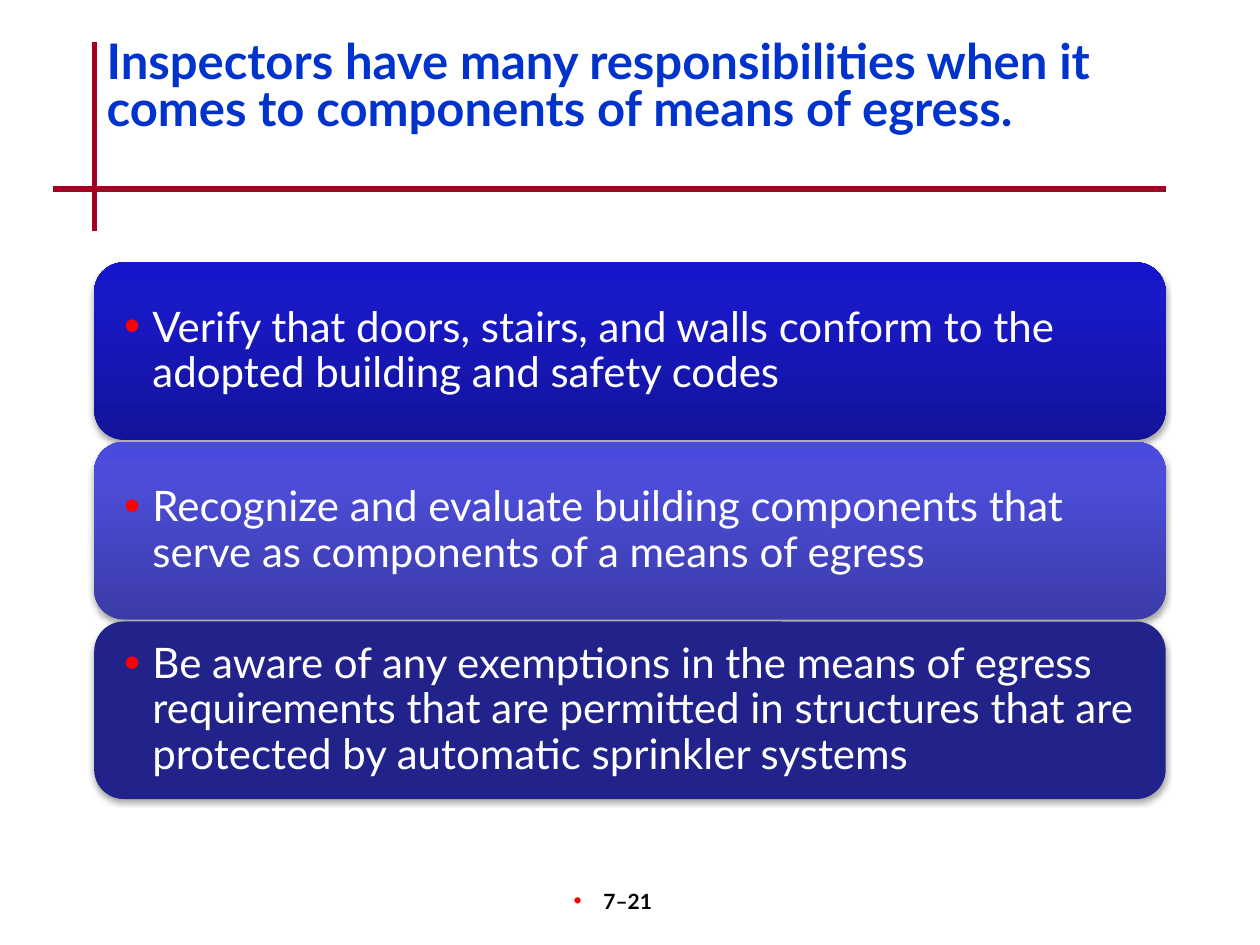
import copy

import lxml.etree
import pptx
import pptx.dml.color
import pptx.enum.shapes
import pptx.enum.text
import pptx.oxml.ns
import pptx.util

Cm = pptx.util.Cm
Pt = pptx.util.Pt
RGBColor = pptx.dml.color.RGBColor
Align = pptx.enum.text.PP_ALIGN
Anchor = pptx.enum.text.MSO_ANCHOR
qn = pptx.oxml.ns.qn

FONT = "Lato"
BLACK = RGBColor(0x00, 0x00, 0x00)
WHITE = RGBColor(0xFF, 0xFF, 0xFF)
TITLE_BLUE = RGBColor(0x00, 0x33, 0xCC)
RULE_RED = RGBColor(0xA5, 0x00, 0x21)
BULLET_RED = RGBColor(0xFF, 0x00, 0x00)

# Gradient stops run from the bottom of a card to its top
STOP_POSITIONS = (0, 0.8, 1)
DEEP_BLUE = (RGBColor(0x13, 0x13, 0x9A), RGBColor(0x19, 0x19, 0xC8), RGBColor(0x15, 0x15, 0xCC))
LIGHT_BLUE = (RGBColor(0x3B, 0x3B, 0xA8), RGBColor(0x4D, 0x4D, 0xDA), RGBColor(0x4A, 0x4A, 0xDE))
NAVY = (RGBColor(0x22, 0x22, 0x8B),)

CARDS = [
    ("Verify that doors, stairs, and walls conform to the adopted building "
     "and safety codes", DEEP_BLUE),
    ("Recognize and evaluate building components that serve as components "
     "of a means of egress", LIGHT_BLUE),
    ("Be aware of any exemptions in the means of egress requirements that are "
     "permitted in structures that are protected by automatic sprinkler systems", NAVY),
]
LEFT, WIDTH = 1.9, 21.6
CARD_TOP, CARD_HEIGHT, CARD_PITCH = 5.29, 3.58, 3.62


def add_element(parent, tag, **attributes):
    element = lxml.etree.SubElement(parent, qn(tag))
    for name, value in attributes.items():
        element.set(name, str(value))
    return element


def add_bullet(paragraph, hanging):
    properties = paragraph._p.get_or_add_pPr()
    properties.set("marL", str(hanging))
    properties.set("indent", str(-hanging))
    color = add_element(properties, "a:buClr")
    add_element(color, "a:srgbClr", val=BULLET_RED)
    add_element(properties, "a:buSzPct", val=110000)
    add_element(properties, "a:buFont", typeface="Arial")
    add_element(properties, "a:buChar", char="•")


def write_text(shape, text, size, color, bold=False, align=Align.LEFT,
               anchor=Anchor.TOP, spacing=1.0, hanging=None,
               margins=(0.25, 0.13, 0.25, 0.13)):
    frame = shape.text_frame
    frame.word_wrap = True
    frame.auto_size = pptx.enum.text.MSO_AUTO_SIZE.NONE
    frame.vertical_anchor = anchor
    (frame.margin_left, frame.margin_top,
     frame.margin_right, frame.margin_bottom) = map(Cm, margins)
    paragraph = frame.paragraphs[0]
    paragraph.alignment = align
    paragraph.line_spacing = spacing
    if hanging is not None:
        add_bullet(paragraph, Cm(hanging))
    run = paragraph.add_run()
    run.text = text
    run.font.name = FONT
    run.font.size = Pt(size)
    run.font.bold = bold
    run.font.color.rgb = color


def add_rule(slide, x1, y1, x2, y2):
    rule = slide.shapes.add_connector(
        pptx.enum.shapes.MSO_CONNECTOR.STRAIGHT, Cm(x1), Cm(y1), Cm(x2), Cm(y2))
    rule.line.color.rgb = RULE_RED
    rule.line.width = Pt(3)
    add_element(rule._element.spPr, "a:effectLst")


def fill_card(card, colors):
    if len(colors) == 1:
        card.fill.solid()
        card.fill.fore_color.rgb = colors[0]
        return
    card.fill.gradient()
    card.fill.gradient_angle = 90
    stop_list = card._element.spPr.find(".//" + qn("a:gsLst"))
    stop_list.append(copy.deepcopy(stop_list[-1]))
    for stop, position, color in zip(card.fill.gradient_stops, STOP_POSITIONS, colors):
        stop.position = position
        stop.color.rgb = color


def add_soft_shadow(shape):
    shape.shadow.inherit = False
    effects = shape._element.spPr.find(qn("a:effectLst"))
    shadow = add_element(effects, "a:outerShdw", blurRad=Pt(3.1), dist=Pt(1.8),
                         dir=5400000, rotWithShape=0)
    color = add_element(shadow, "a:srgbClr", val=BLACK)
    add_element(color, "a:alpha", val=35000)


def add_card(slide, top, text, colors):
    card = slide.shapes.add_shape(
        pptx.enum.shapes.MSO_SHAPE.ROUNDED_RECTANGLE,
        Cm(LEFT), Cm(top), Cm(WIDTH), Cm(CARD_HEIGHT))
    fill_card(card, colors)
    card.line.fill.background()
    add_soft_shadow(card)
    write_text(card, text, 24, WHITE, anchor=Anchor.MIDDLE, spacing=0.9,
               hanging=0.57, margins=(0.43, 0.43, 0.43, 0.43))


def main():
    presentation = pptx.Presentation()
    presentation.slide_width = Cm(25.4)
    presentation.slide_height = Cm(19.05)
    slide = presentation.slides.add_slide(presentation.slide_layouts[5])

    # Crossed rules beside and below the title
    add_rule(slide, 1.9, 0.85, 1.9, 4.66)
    add_rule(slide, 1.06, 3.81, 23.5, 3.81)

    # Title
    title = slide.shapes.title
    title.left, title.top = Cm(LEFT), Cm(0.71)
    title.width, title.height = Cm(WIDTH), Cm(2.54)
    write_text(title, "Inspectors have many responsibilities when it comes to "
               "components of means of egress.", 28, TITLE_BLUE, bold=True, spacing=0.8)

    # Stack of responsibilities
    for index, (text, colors) in enumerate(CARDS):
        add_card(slide, CARD_TOP + index * CARD_PITCH, text, colors)

    # Page number
    page_number = slide.shapes.add_textbox(Cm(9.96), Cm(17.78), Cm(5.28), Cm(1.27))
    write_text(page_number, "7–21", 12, BLACK, bold=True, align=Align.CENTER,
               hanging=0.6, margins=(0.25, 0.13, 0.74, 0.13))

    presentation.save("out.pptx")


if __name__ == "__main__":
    main()
